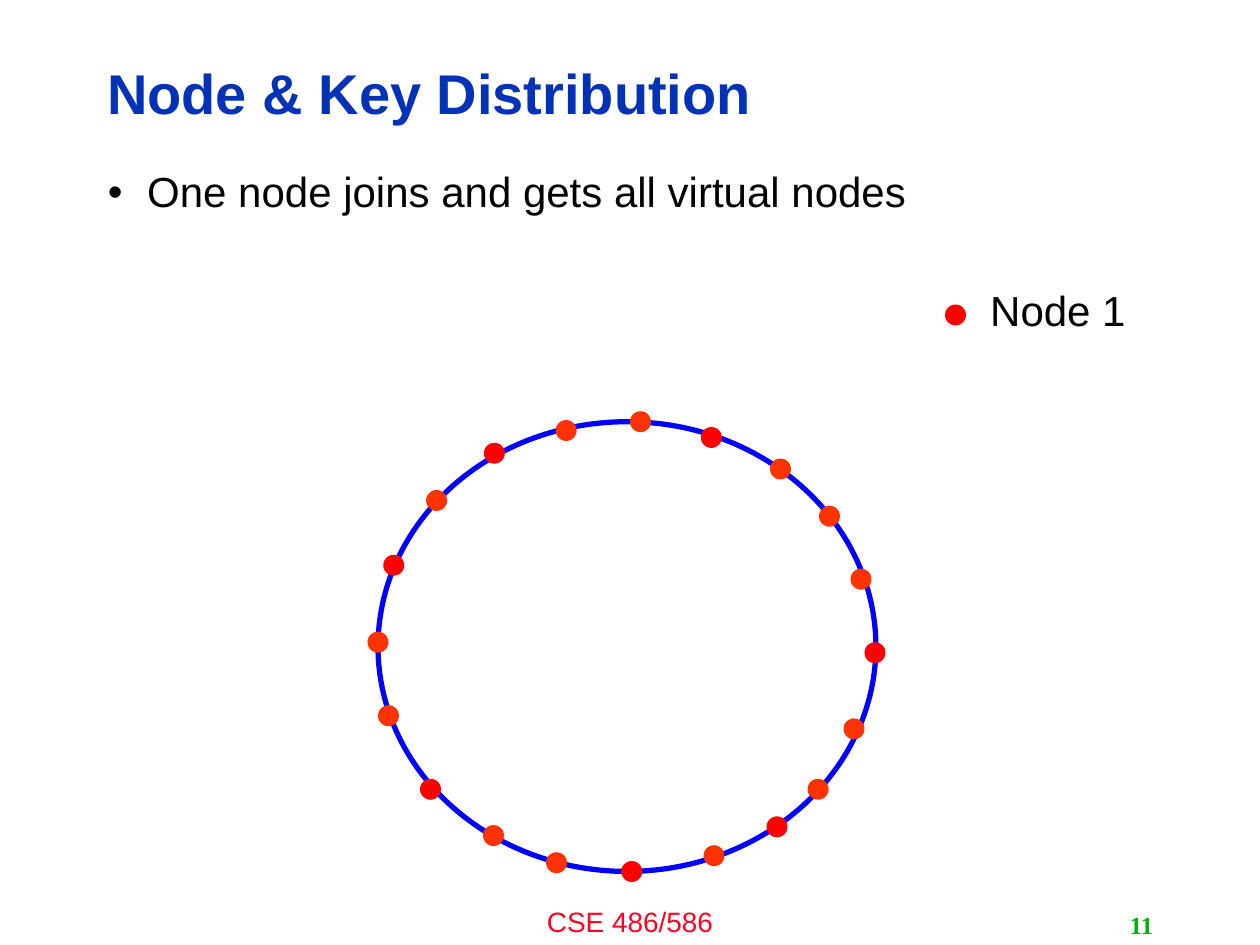
from pptx import Presentation
from pptx.dml.color import RGBColor
from pptx.enum.shapes import MSO_SHAPE
from pptx.enum.text import MSO_ANCHOR, PP_ALIGN
from pptx.oxml.ns import qn
from pptx.util import Pt
from lxml.etree import SubElement

RED, ORANGE = "FF0000", "FF3300"
DOT = 12

# Left, top and colour of each node, clockwise from the top of the ring.
NODES = [
    (360, 235, ORANGE), (400.5, 244, RED), (440, 262, ORANGE),
    (468, 289, ORANGE), (486, 325, ORANGE), (494, 367, RED),
    (482, 410.5, ORANGE), (461.5, 445, ORANGE), (438, 466.5, RED),
    (402, 483, ORANGE), (355, 492, RED), (312, 487, ORANGE),
    (276, 471.5, ORANGE), (240, 445, RED), (216, 403, ORANGE),
    (210, 361, ORANGE), (219, 317, RED), (243.5, 280, ORANGE),
    (276.5, 253, RED), (317.5, 240, ORANGE),
]


def color(code):
    return RGBColor.from_string(code)


def assign(item, values):
    for name, value in values.items():
        setattr(item, name, value)


class Deck:
    """Holds the text style and the current slide."""

    face = "Arial"
    ink = "000000"

    def __init__(self, file):
        self.slide = file.slides.add_slide(file.slide_layouts[5])
        self.shapes = self.slide.shapes

    def label(self, shape, text, size, ink=None, face=None, bold=False,
              wrap=True, anchor=MSO_ANCHOR.TOP, **form):
        """Fill a shape with one paragraph; form sets paragraph values."""
        frame = shape.text_frame
        assign(frame, {"word_wrap": wrap, "vertical_anchor": anchor})
        para = frame.paragraphs[0]
        assign(para, form)
        run = para.add_run()
        run.text = text
        assign(run.font, {"name": face or self.face, "size": Pt(size),
                          "bold": bold})
        run.font.color.rgb = color(ink or self.ink)
        return para

    def title(self, box, text, size, **form):
        shape = self.shapes.title
        sides = ("left", "top", "width", "height")
        assign(shape, dict(zip(sides, map(Pt, box))))
        self.label(shape, text, size, **form)

    def text(self, box, text, size, **form):
        shape = self.shapes.add_textbox(*map(Pt, box))
        return self.label(shape, text, size, **form)

    def bullet(self, box, text, size, indent, **form):
        props = self.text(box, text, size, **form)._p.get_or_add_pPr()
        props.set("marL", str(Pt(indent)))
        props.set("indent", str(-Pt(indent)))
        SubElement(props, qn("a:buFont"), typeface=self.face)
        SubElement(props, qn("a:buChar"), char="•")

    def oval(self, box, fill=None, line=None, width=0):
        shape = self.shapes.add_shape(MSO_SHAPE.OVAL, *map(Pt, box))
        shape.shadow.inherit = False
        if fill:
            shape.fill.solid()
            shape.fill.fore_color.rgb = color(fill)
        else:
            shape.fill.background()
        if line:
            shape.line.color.rgb = color(line)
            shape.line.width = Pt(width)
        else:
            shape.line.fill.background()

    def dot(self, left, top, fill):
        self.oval((left, top, DOT, DOT), fill)


def main():
    file = Presentation()
    assign(file, {"slide_width": Pt(720), "slide_height": Pt(540)})
    deck = Deck(file)

    deck.title((54, 26, 574.5, 58), "Node & Key Distribution", 32,
               ink="0332B7", bold=True, anchor=MSO_ANCHOR.MIDDLE,
               alignment=PP_ALIGN.LEFT, line_spacing=0.9)
    deck.bullet((54.5, 94.5, 605, 388),
                "One node joins and gets all virtual nodes", 24, 22.5,
                line_spacing=0.9)

    deck.oval((216, 241, 284.5, 257), line="0000FF", width=3)
    for node in NODES:
        deck.dot(*node)

    deck.dot(540, 174, RED)
    deck.text((558, 159, 93, 36), "Node 1", 24, wrap=False,
              alignment=PP_ALIGN.CENTER)

    deck.text((240, 513.5, 240, 26.5), "CSE 486/586", 16, ink="FC0128",
              alignment=PP_ALIGN.CENTER)
    deck.text((516, 517, 150, 23), "11", 14, ink="00AE00", bold=True,
              face="Times New Roman", anchor=MSO_ANCHOR.MIDDLE,
              alignment=PP_ALIGN.RIGHT)
    file.save("out.pptx")


if __name__ == "__main__":
    main()
